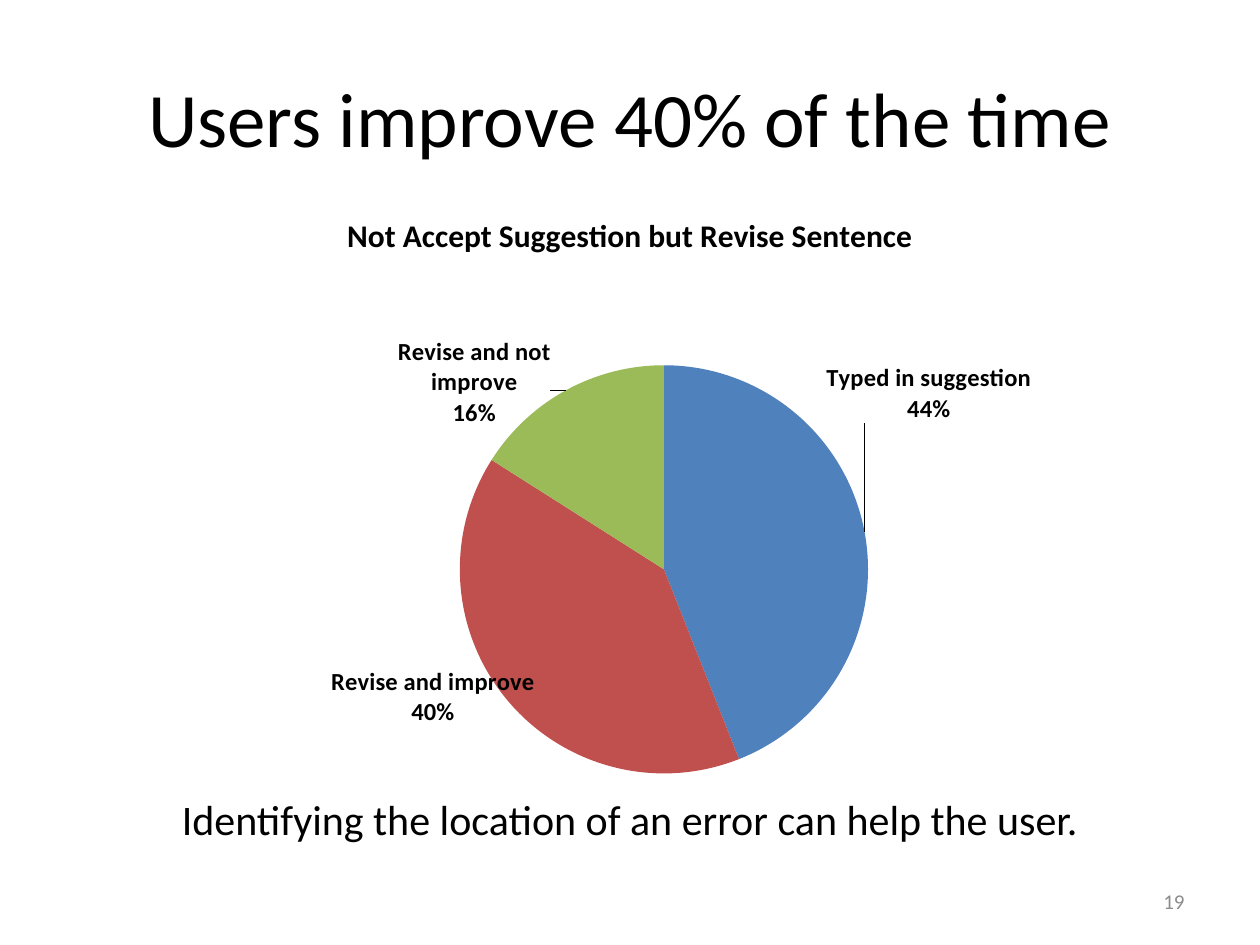
from lxml import etree
from pptx import Presentation
from pptx.chart.data import CategoryChartData
from pptx.dml.color import RGBColor
from pptx.enum.chart import XL_CHART_TYPE, XL_LABEL_POSITION
from pptx.enum.text import MSO_ANCHOR, PP_ALIGN
from pptx.oxml.ns import qn
from pptx.util import Pt

PIE = XL_CHART_TYPE.PIE
OUTSIDE_END = XL_LABEL_POSITION.OUTSIDE_END
CENTER, RIGHT = PP_ALIGN.CENTER, PP_ALIGN.RIGHT
TOP, MIDDLE = MSO_ANCHOR.TOP, MSO_ANCHOR.MIDDLE

FONT = "Calibri"
BLACK = RGBColor(0x00, 0x00, 0x00)
GRAY = RGBColor(0x8C, 0x8C, 0x8C)
BLUE = RGBColor(0x4F, 0x81, 0xBD)
RED = RGBColor(0xC0, 0x50, 0x4D)
GREEN = RGBColor(0x9B, 0xBB, 0x59)

CHART_TITLE = "Not Accept Suggestion but Revise Sentence"
# Category, percentage, colour, label offset as a fraction of the chart
SLICES = [
    ("Typed in suggestion", 44, BLUE, (-0.04, -0.17)),
    ("Revise and improve", 40, RED, (0.03, -0.06)),
    ("Revise and not improve", 16, GREEN, (-0.01, 0.07)),
]


def style_font(font, size, color=BLACK, bold=False):
    font.name = FONT
    font.size = Pt(size)
    font.bold = bold
    font.color.rgb = color


def write_text(shape, text, size, color, align, anchor):
    tf = shape.text_frame
    tf.word_wrap = True
    tf.vertical_anchor = anchor
    p = tf.paragraphs[0]
    p.text = text
    p.alignment = align
    style_font(p.font, size, color)


def add_title(s, text):
    title = s.shapes.title
    title.left, title.top, title.width, title.height = Pt(36), Pt(21.6), Pt(648), Pt(90)
    write_text(title, text, 44, BLACK, CENTER, MIDDLE)


def add_text(s, text, left, top, width, height, size, color, align, anchor):
    box = s.shapes.add_textbox(Pt(left), Pt(top), Pt(width), Pt(height))
    write_text(box, text, size, color, align, anchor)


def make_layout(**values):
    """Return a manual chart layout; its values are fractions of the chart."""
    layout = etree.Element(qn("c:layout"))
    manual = etree.SubElement(layout, qn("c:manualLayout"))
    for name, value in values.items():
        etree.SubElement(manual, qn("c:" + name)).set("val", str(value))
    return layout


def place_plot(plot_area):
    for old in plot_area.findall(qn("c:layout")):
        plot_area.remove(old)
    plot_area.insert(0, make_layout(layoutTarget="inner", xMode="edge", yMode="edge",
                                    x=0.35, y=0.28, w=0.36, h=0.66))


def show_category_and_percent(label, offset):
    x, y = offset
    label.find(qn("c:idx")).addnext(make_layout(x=x, y=y))
    for name, shown in (("showVal", "0"), ("showCatName", "1"), ("showPercent", "1")):
        label.find(qn("c:" + name)).set("val", shown)
    etree.SubElement(label, qn("c:separator")).text = "\n"


def add_pie(s):
    data = CategoryChartData()
    data.categories = [name for name, *_ in SLICES]
    data.add_series(CHART_TITLE, [value for _, value, *_ in SLICES])
    chart = s.shapes.add_chart(PIE, Pt(36), Pt(108), Pt(648), Pt(356.4), data).chart
    chart.has_legend = False
    style_font(chart.font, 10)
    chart.has_title = True
    p = chart.chart_title.text_frame.paragraphs[0]
    p.text = CHART_TITLE
    style_font(p.font, 18, bold=True)

    plot = chart.plots[0]
    plot.vary_by_categories = True
    series = plot.series[0]
    for i, (_, _, color, _) in enumerate(SLICES):
        point = series.points[i]
        point.format.fill.solid()
        point.format.fill.fore_color.rgb = color
        style_font(point.data_label.font, 14, bold=True)
        point.data_label.position = OUTSIDE_END
    labels = list(series._element.iter(qn("c:dLbl")))
    for label, (*_, offset) in zip(labels, SLICES):
        show_category_and_percent(label, offset)
    place_plot(plot._element.getparent())


def main():
    prs = Presentation()
    prs.slide_width, prs.slide_height = Pt(720), Pt(540)
    s = prs.slides.add_slide(prs.slide_layouts[5])
    add_title(s, "Users improve 40% of the time")
    add_text(s, "19", 516, 500.4, 168, 28.8, 12, GRAY, RIGHT, MIDDLE)
    add_pie(s)
    add_text(s, "Identifying the location of an error can help the user.",
             36, 450, 648, 36, 24, BLACK, CENTER, TOP)
    prs.save("out.pptx")


if __name__ == "__main__":
    main()
